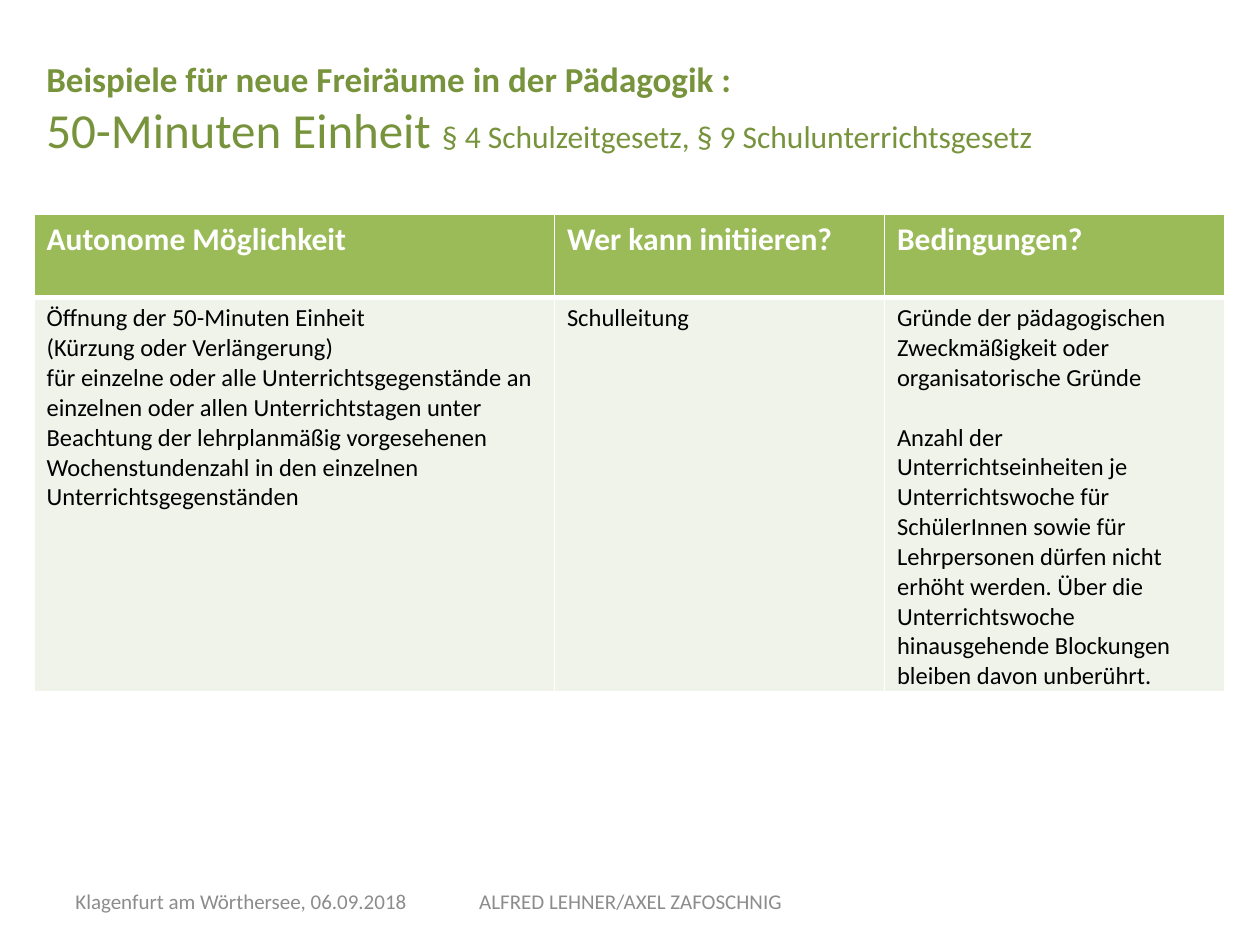
import pptx
import pptx.dml.color
import pptx.enum.text
import pptx.oxml
import pptx.oxml.ns
import pptx.util
from pptx.util import Inches, Pt

RGBColor = pptx.dml.color.RGBColor
PP_ALIGN = pptx.enum.text.PP_ALIGN
MSO_ANCHOR = pptx.enum.text.MSO_ANCHOR

WHITE = RGBColor(0xFF, 0xFF, 0xFF)
BLACK = RGBColor(0, 0, 0)
OLIVE = RGBColor(0x77, 0x93, 0x3C)
HEADER_GREEN = RGBColor(0x9B, 0xBB, 0x59)
BODY_GREEN = RGBColor(0xEF, 0xF3, 0xEA)
FOOTER_GRAY = RGBColor(0x8C, 0x8C, 0x8C)


class SlideBuilder:
    """Holds the style and the current slide."""

    font_name = "Calibri"

    def __init__(self, slide):
        self.slide = slide

    def add_run(self, paragraph, text, size, color, bold=False):
        run = paragraph.add_run()
        run.text = text
        run.font.name = self.font_name
        run.font.size = Pt(size)
        run.font.bold = bold
        run.font.color.rgb = color

    def add_lines(self, paragraph, lines, color):
        """Each line is a list of (text, size, bold) runs."""
        for index, line in enumerate(lines):
            if index:
                paragraph.add_line_break()
            for text, size, bold in line:
                self.add_run(paragraph, text, size, color, bold)

    def add_text(self, left, top, width, height, lines, color,
                 align=PP_ALIGN.LEFT, anchor=MSO_ANCHOR.TOP):
        shape = self.slide.shapes.add_textbox(
            Inches(left), Inches(top), Inches(width), Inches(height))
        frame = shape.text_frame
        frame.word_wrap = True
        frame.vertical_anchor = anchor
        paragraph = frame.paragraphs[0]
        paragraph.alignment = align
        self.add_lines(paragraph, lines, color)

    def set_borders(self, cell, widths):
        properties = cell._tc.get_or_add_tcPr()
        for position, (side, width) in enumerate(widths.items()):
            properties.insert(position, pptx.oxml.parse_xml(
                f'<a:ln{side} {pptx.oxml.ns.nsdecls("a")} w="{Pt(width)}">'
                f'<a:solidFill><a:srgbClr val="{WHITE}"/></a:solidFill>'
                f'</a:ln{side}>'))

    def fill_cell(self, cell, paragraphs, size, color, fill, bold, gap):
        cell.fill.solid()
        cell.fill.fore_color.rgb = fill
        frame = cell.text_frame
        for index, lines in enumerate(paragraphs):
            paragraph = frame.add_paragraph() if index else frame.paragraphs[0]
            if index:
                paragraph.space_before = Pt(gap)
            self.add_lines(
                paragraph, [[(line, size, bold)] for line in lines], color)

    def add_table(self, left, top, widths, heights, headers, bodies):
        table = self.slide.shapes.add_table(
            2, len(widths), Inches(left), Inches(top),
            Inches(sum(widths)), Inches(sum(heights))).table
        for row, height in zip(table.rows, heights):
            row.height = Inches(height)
        for index, (width, header, body) in enumerate(
                zip(widths, headers, bodies)):
            table.columns[index].width = Inches(width)
            gap, paragraphs = body
            header_cell, body_cell = table.cell(0, index), table.cell(1, index)
            self.fill_cell(header_cell, [[header]], 18, WHITE,
                           HEADER_GREEN, True, 0)
            self.fill_cell(body_cell, paragraphs, 14, BLACK,
                           BODY_GREEN, False, gap)
            body_cell.margin_bottom = 0
            self.set_borders(header_cell, {"L": 1, "R": 1, "T": 1, "B": 3})
            self.set_borders(body_cell, {"L": 1, "R": 1, "T": 3, "B": 1})


def main():
    presentation = pptx.Presentation()
    presentation.slide_width = Inches(10)
    presentation.slide_height = Inches(7.5)
    builder = SlideBuilder(
        presentation.slides.add_slide(presentation.slide_layouts[6]))

    # Table: gap before later paragraphs, then paragraphs as lists of lines
    bodies = [
        (0, [["Öffnung der 50-Minuten Einheit", "(Kürzung oder Verlängerung)"],
             ["für einzelne oder alle Unterrichtsgegenstände an einzelnen "
              "oder allen Unterrichtstagen unter Beachtung der "
              "lehrplanmäßig vorgesehenen Wochenstundenzahl in den "
              "einzelnen Unterrichtsgegenständen"]]),
        (0, [["Schulleitung"]]),
        (17, [["Gründe der pädagogischen Zweckmäßigkeit oder "
               "organisatorische Gründe"],
              ["Anzahl der Unterrichtseinheiten je Unterrichtswoche für "
               "SchülerInnen sowie für Lehrpersonen dürfen nicht erhöht "
               "werden. Über die Unterrichtswoche hinausgehende Blockungen "
               "bleiben davon unberührt."]]),
    ]
    builder.add_table(
        0.27, 1.7, [4.13, 2.62, 2.7], [0.66, 3.13],
        ["Autonome Möglichkeit", "Wer kann initiieren?", "Bedingungen?"],
        bodies)

    # Title
    builder.add_text(0.27, 0.41, 8.96, 0.99, [
        [("Beispiele für neue Freiräume in der Pädagogik :", 20, True)],
        [("50-Minuten Einheit ", 28, False),
         ("§ 4 Schulzeitgesetz, § 9 Schulunterrichtsgesetz", 18, False)],
    ], OLIVE)

    # Footer
    for left, width, text, align in [
        (0.5, 2.92, "Klagenfurt am Wörthersee, 06.09.2018", PP_ALIGN.LEFT),
        (3.42, 3.17, "ALFRED LEHNER/AXEL ZAFOSCHNIG", PP_ALIGN.CENTER),
    ]:
        builder.add_text(left, 6.95, width, 0.4, [[(text, 12, False)]],
                         FOOTER_GRAY, align, MSO_ANCHOR.MIDDLE)

    presentation.save("out.pptx")


if __name__ == "__main__":
    main()
